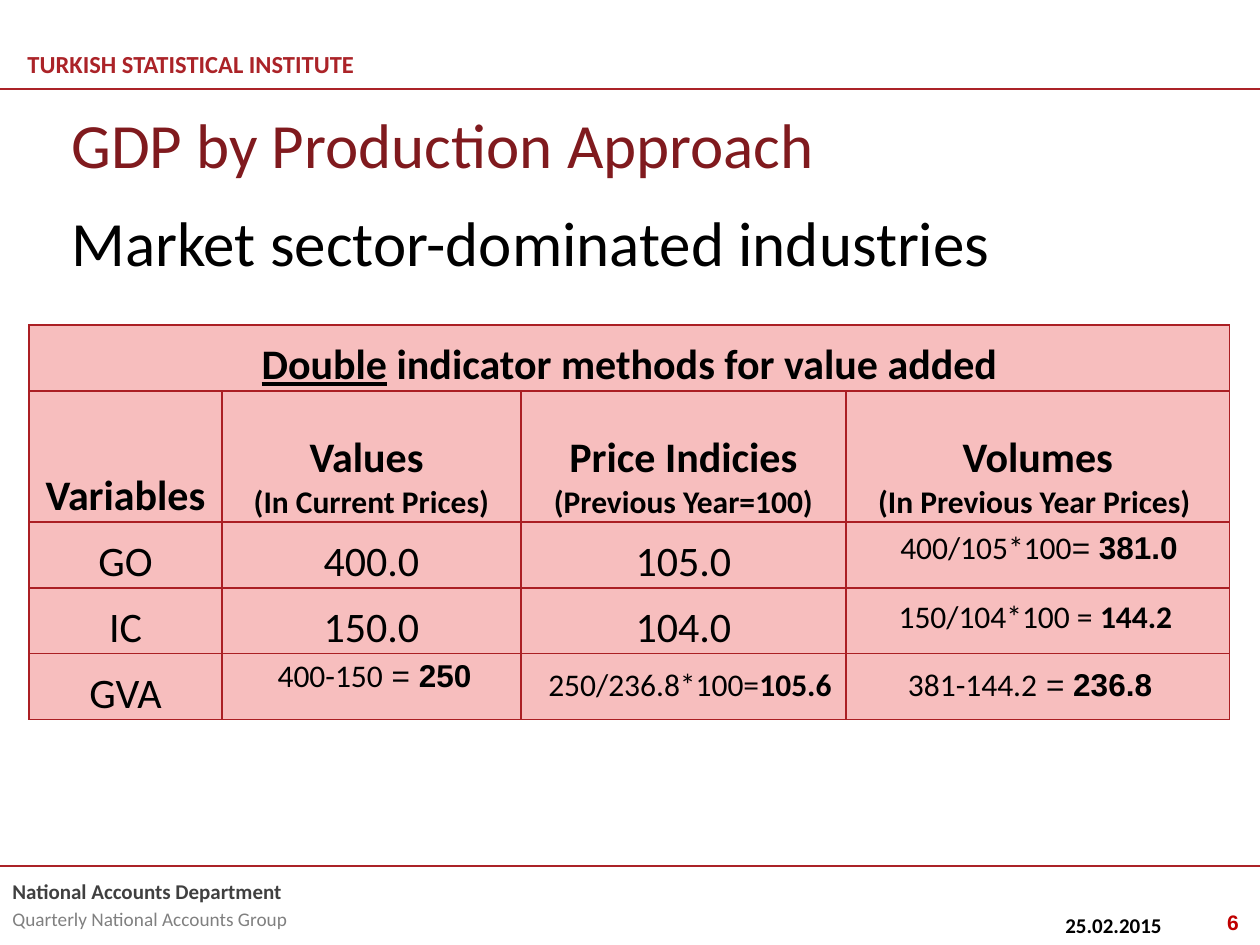
from dataclasses import dataclass
from typing import Optional

import pptx
import pptx.dml.color
import pptx.enum.shapes
import pptx.enum.text
import pptx.oxml
import pptx.oxml.ns
import pptx.util

EMU_PER_PX = 914400 / 126
ALIGN = pptx.enum.text.PP_ALIGN
ANCHOR = pptx.enum.text.MSO_ANCHOR
RULE_RED, BORDER_RED, CELL_PINK = "AB2328", "AB1F24", "F7BEBE"


@dataclass
class Run:
    text: str
    size: Optional[int] = None
    bold: Optional[bool] = None
    font: Optional[str] = None
    underline: Optional[bool] = None
    break_before: bool = False


@dataclass
class Line:
    runs: list[Run]
    size: int
    color: str = "000000"
    bold: bool = False
    font: str = "Calibri"
    align: ALIGN = ALIGN.LEFT
    space_before: float = 0


@dataclass
class Box:
    left: int
    top: int
    width: int
    height: int
    lines: list[Line]
    anchor: ANCHOR = ANCHOR.TOP


def px(length: int) -> int:
    return round(length * EMU_PER_PX)


def rgb(color: str) -> pptx.dml.color.RGBColor:
    return pptx.dml.color.RGBColor.from_string(color)


def write_lines(text_frame, lines: list[Line]) -> None:
    for index, line in enumerate(lines):
        paragraph = text_frame.add_paragraph() if index else text_frame.paragraphs[0]
        paragraph.alignment = line.align
        if index:
            paragraph.space_before = pptx.util.Pt(line.space_before)
        font = paragraph.font
        font.name, font.bold = line.font, line.bold
        font.size = pptx.util.Pt(line.size)
        font.color.rgb = rgb(line.color)
        for part in line.runs:
            if part.break_before:
                paragraph.add_line_break()
            run = paragraph.add_run()
            run.text = part.text
            if part.size is not None:
                run.font.size = pptx.util.Pt(part.size)
            if part.bold is not None:
                run.font.bold = part.bold
            if part.font is not None:
                run.font.name = part.font
            if part.underline is not None:
                run.font.underline = part.underline


def add_box(slide, box: Box) -> None:
    shape = slide.shapes.add_textbox(px(box.left), px(box.top), px(box.width), px(box.height))
    frame = shape.text_frame
    frame.word_wrap = True
    frame.vertical_anchor = box.anchor
    if box.anchor == ANCHOR.BOTTOM:
        frame.margin_bottom = 0
    write_lines(frame, box.lines)


def add_rule(slide, top: int) -> None:
    rule = slide.shapes.add_connector(
        pptx.enum.shapes.MSO_CONNECTOR.STRAIGHT, 0, px(top), px(1260), px(top))
    rule.line.color.rgb = rgb(RULE_RED)
    rule.line.width = pptx.util.Pt(1.5)
    properties = rule._element.spPr
    properties.append(properties.makeelement(pptx.oxml.ns.qn("a:effectLst"), {}))


def style_cell(cell) -> None:
    cell.fill.solid()
    cell.fill.fore_color.rgb = rgb(CELL_PINK)
    cell.vertical_anchor = ANCHOR.BOTTOM
    cell.margin_left = cell.margin_right = cell.margin_top = px(1)
    cell.margin_bottom = 0
    properties = cell._tc.get_or_add_tcPr()
    for index, side in enumerate(("lnL", "lnR", "lnT", "lnB")):
        properties.insert(index, pptx.oxml.parse_xml(
            f'<a:{side} {pptx.oxml.ns.nsdecls("a")} w="9525"><a:solidFill>'
            f'<a:srgbClr val="{BORDER_RED}"/></a:solidFill></a:{side}>'))


def add_table(slide, left: int, top: int, widths: list[int], heights: list[int],
              rows: list[list[Optional[Line]]]) -> None:
    table = slide.shapes.add_table(
        len(heights), len(widths), px(left), px(top), px(sum(widths)), px(sum(heights))).table
    table.first_row = table.horz_banding = False
    for column, width in zip(table.columns, widths):
        column.width = px(width)
    for row, height in zip(table.rows, heights):
        row.height = px(height)
    for cell in table.iter_cells():
        style_cell(cell)
    table.cell(0, 0).merge(table.cell(0, len(widths) - 1))
    for row_index, row in enumerate(rows):
        for column_index, line in enumerate(row):
            if line:
                write_lines(table.cell(row_index, column_index).text_frame, [line])


def heading(title: str, note: str) -> Line:
    return Line([Run(title), Run(note, size=18, break_before=True)], 24,
                bold=True, align=ALIGN.CENTER)


def value(text: str) -> Line:
    return Line([Run(text)], 24, align=ALIGN.CENTER)


def formula(left: int, top: int, width: int, *runs: Run) -> Box:
    return Box(left, top, width, 50, [Line(list(runs), 18, align=ALIGN.CENTER)])


# Header, footer and titles
BOXES = [
    Box(15, 24, 446, 54, [Line([Run("TURKISH STATISTICAL INSTITUTE")], 14, RULE_RED, True)],
        ANCHOR.BOTTOM),
    Box(0, 872, 541, 67, [
        Line([Run("National Accounts Department")], 12, "404040", True),
        Line([Run("Quarterly National Accounts Group")], 11, "808080", space_before=2.2)]),
    Box(1053, 906, 200, 36, [Line([Run("25.02.2015")], 12, bold=True)]),
    Box(958, 903, 293, 36, [Line([Run("6")], 12, "C00000", True, "Arial", ALIGN.RIGHT)]),
    Box(59, 98, 1134, 90, [Line([Run("GDP by Production Approach")], 36, "801A1E")],
        ANCHOR.MIDDLE),
    Box(59, 197, 1082, 89, [Line([Run("Market sector-dominated industries")], 36)]),
]

# Table contents
ROWS = [
    [Line([Run("Double", underline=True), Run(" indicator methods for value added")], 24,
          bold=True, align=ALIGN.CENTER)],
    [Line([Run("Variables")], 24, bold=True, align=ALIGN.CENTER),
     heading("Values ", "(In Current Prices)"),
     heading("Price Indicies", "(Previous Year=100)"),
     heading("Volumes", "(In Previous Year Prices) ")],
    [value("GO"), value("400.0"), value("105.0")],
    [value("IC"), value("150.0"), value("104.0")],
    [value("GVA")],
]

# Calculations laid over the table
FORMULAS = [
    formula(847, 522, 384, Run("400/105*100"), Run("= ", font="Arial"),
            Run("381.0", bold=True, font="Arial")),
    formula(847, 591, 384, Run("150/104*100 = "), Run("144.2 ", bold=True)),
    formula(838, 659, 384, Run("381-144.2"), Run(" = ", font="Arial"),
            Run("236.8", bold=True, font="Arial")),
    formula(227, 650, 295, Run("400-150"), Run(" = ", font="Arial"),
            Run("250", bold=True, font="Arial")),
    formula(493, 659, 394, Run("250/236.8*100="), Run("105.6", bold=True)),
]


def main() -> None:
    presentation = pptx.Presentation()
    presentation.slide_width, presentation.slide_height = px(1260), px(945)
    slide = presentation.slides.add_slide(presentation.slide_layouts[6])
    for top in (89, 866):
        add_rule(slide, top)
    for box in BOXES:
        add_box(slide, box)
    add_table(slide, 29, 325, [193, 299, 325, 384], [66, 131, 66, 66, 66], ROWS)
    for box in FORMULAS:
        add_box(slide, box)
    presentation.save("out.pptx")


if __name__ == "__main__":
    main()
